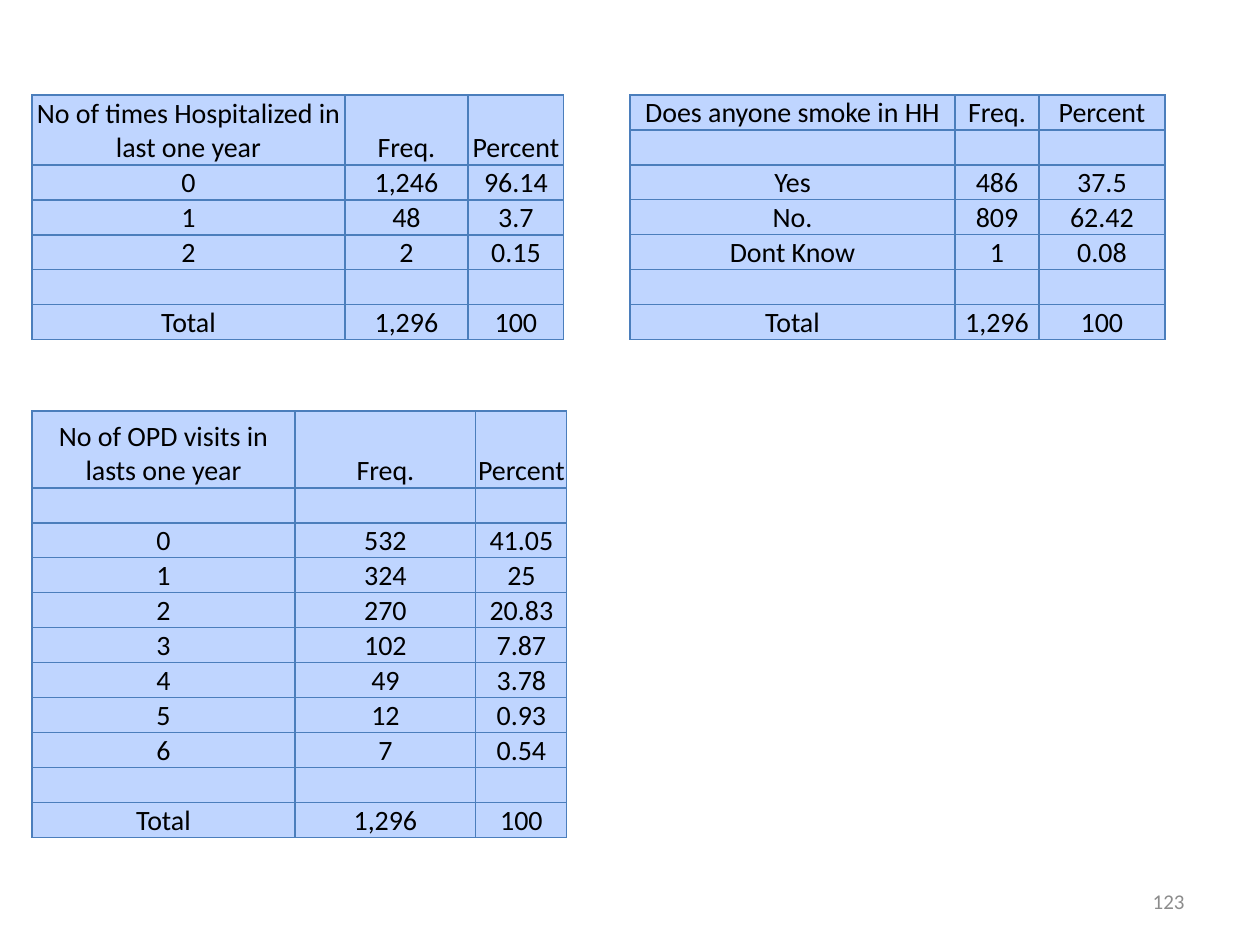
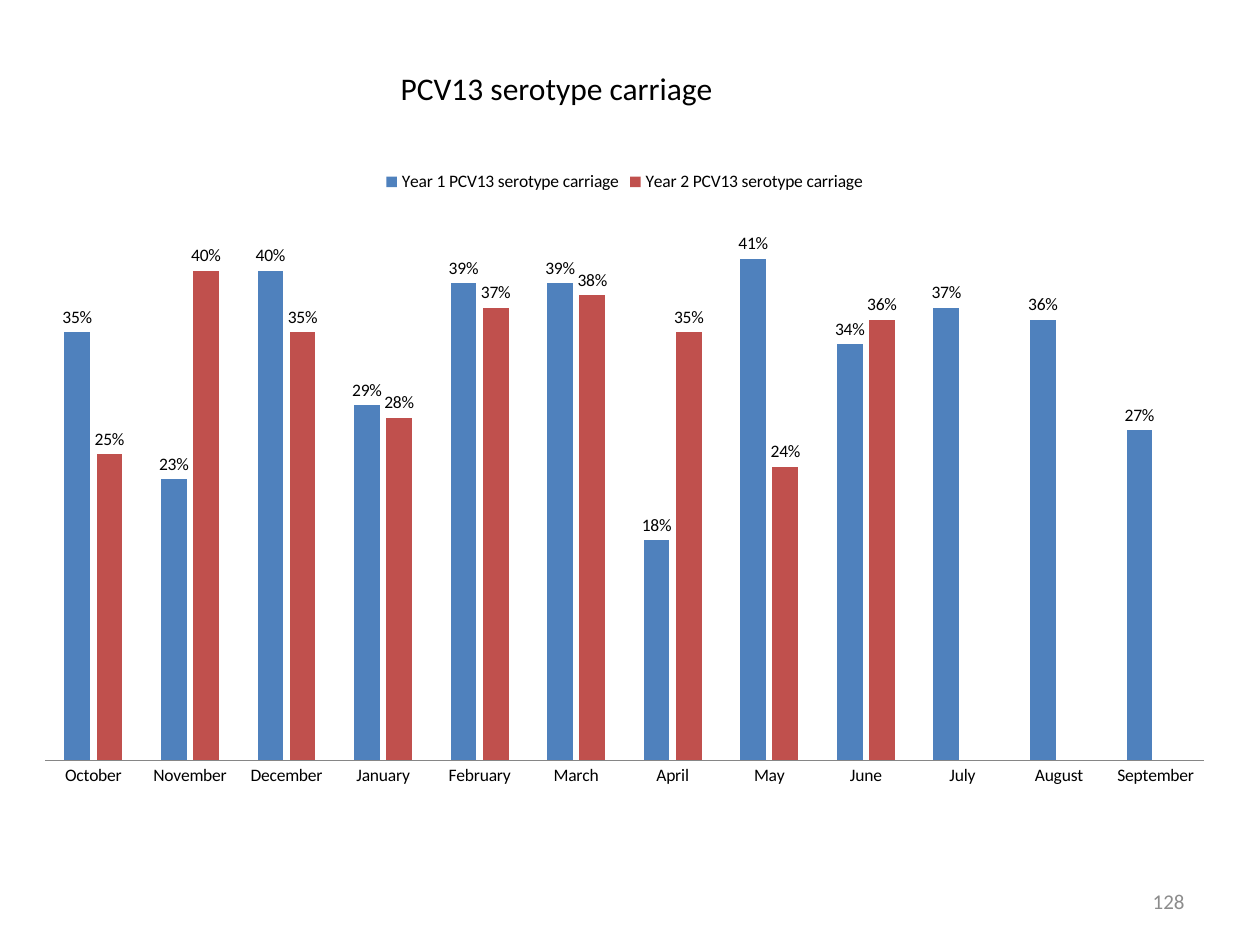
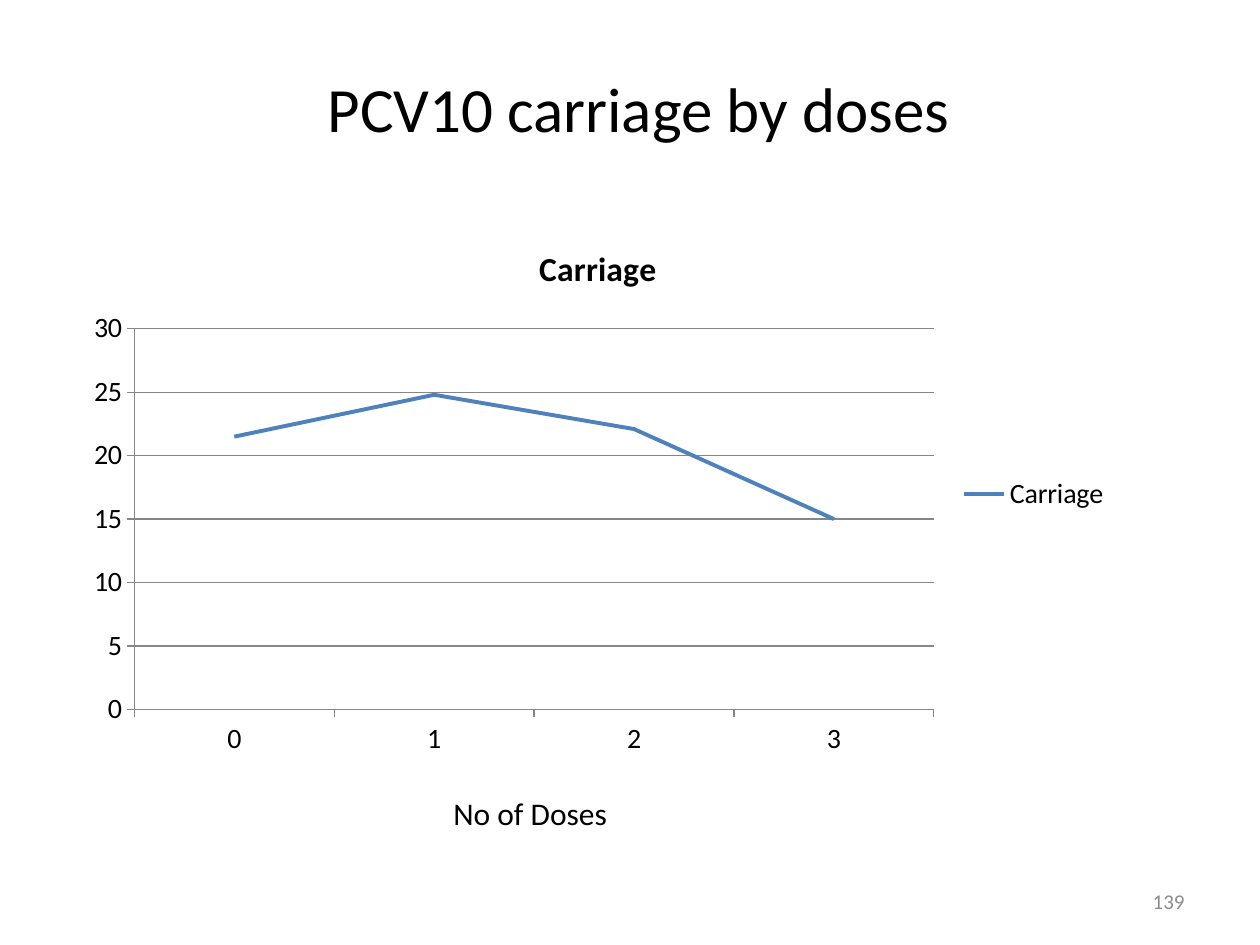
import pptx
import pptx.chart.data
import pptx.dml.color
import pptx.enum.chart
import pptx.enum.text
import pptx.oxml
import pptx.oxml.ns
import pptx.util
from lxml import etree

SCALE = 914400 / 126
FONT = "Calibri"
BLACK, GREY, AXIS = "000000", "8C8C8C", "868686"
BLUE, RED, PALE, EDGE = "4F81BD", "C0504D", "BFD5FF", "4B7EBC"
ALIGN = pptx.enum.text.PP_ALIGN
ANCHOR = pptx.enum.text.MSO_ANCHOR
KIND = pptx.enum.chart.XL_CHART_TYPE
SIDE = pptx.enum.chart.XL_LEGEND_POSITION
TICK = pptx.enum.chart.XL_TICK_MARK
MONTHS = ["October", "November", "December", "January", "February", "March",
          "April", "May", "June", "July", "August", "September"]


def px(count):
    """Turn px into EMU."""
    return pptx.util.Emu(round(count * SCALE))


def tint(code):
    """Turn a hex string into a colour."""
    return pptx.dml.color.RGBColor.from_string(code)


def style(font, size, code=BLACK, bold=False):
    """Set the look of a font."""
    font.name, font.size, font.bold = FONT, pptx.util.Pt(size), bold
    font.color.rgb = tint(code)


class Deck:
    """Holds the shared style and the current slide."""

    def __init__(self):
        """Start an empty deck."""
        self.prs = pptx.Presentation()
        self.prs.slide_width, self.prs.slide_height = px(1260), px(945)

    def page(self, number, titled=True):
        """Add a slide with its number."""
        layout = self.prs.slide_layouts[5 if titled else 6]
        self.slide = self.prs.slides.add_slide(layout)
        box = self.text(number, (903, 876, 294, 50), 12, GREY, ALIGN.RIGHT)
        box.text_frame.vertical_anchor = ANCHOR.MIDDLE

    def fill(self, shape, words, size, code, align):
        """Put one styled line into a shape."""
        frame = shape.text_frame
        frame.text = words
        frame.word_wrap = False
        frame.vertical_anchor = ANCHOR.TOP
        frame.paragraphs[0].alignment = align
        style(frame.paragraphs[0].runs[0].font, size, code)

    def text(self, words, area, size, code=BLACK, align=ALIGN.LEFT):
        """Add a text box."""
        box = self.slide.shapes.add_textbox(*map(px, area))
        self.fill(box, words, size, code, align)
        return box

    def title(self, words, area, size):
        """Place and format the title."""
        head = self.slide.shapes.title
        head.left, head.top, head.width, head.height = map(px, area)
        self.fill(head, words, size, BLACK, ALIGN.LEFT)

    def cell(self, cell, words):
        """Format one table cell with its borders."""
        cell.margin_left = cell.margin_right = cell.margin_top = px(1)
        cell.margin_bottom = 0
        cell.vertical_anchor = ANCHOR.BOTTOM
        cell.text = words
        para = cell.text_frame.paragraphs[0]
        para.alignment = ALIGN.CENTER
        for run in para.runs:
            style(run.font, 16)
        if not words:
            etree.SubElement(para._p, pptx.oxml.ns.qn("a:endParaRPr"), sz="1600")
        props = cell._tc.get_or_add_tcPr()
        for side in ("lnL", "lnR", "lnT", "lnB"):
            props.append(pptx.oxml.parse_xml(
                f'<a:{side} {pptx.oxml.ns.nsdecls("a")} w="9525"><a:solidFill>'
                f'<a:srgbClr val="{EDGE}"/></a:solidFill></a:{side}>'))
        cell.fill.solid()
        cell.fill.fore_color.rgb = tint(PALE)

    def table(self, left, top, widths, head, rows):
        """Add a table of counts and shares."""
        rows = [(rows[0], "Freq.", "Percent"), *rows[1:]]
        high = head + 35 * (len(rows) - 1)
        area = map(px, (left, top, sum(widths), high))
        grid = self.slide.shapes.add_table(len(rows), len(widths), *area).table
        for col, width in zip(grid.columns, widths):
            col.width = px(width)
        for i, row in enumerate(rows):
            grid.rows[i].height = px(35 if i else head)
            for j, words in enumerate(row):
                self.cell(grid.cell(i, j), words)

    def chart(self, kind, area, cats, series, size, side, top, form="General"):
        """Add a chart with the shared axis and legend style."""
        data = pptx.chart.data.CategoryChartData(number_format=form)
        data.categories = cats
        for name, vals in series:
            data.add_series(name, vals)
        chart = self.slide.shapes.add_chart(kind, *map(px, area), data).chart
        style(chart.font, size)
        chart.has_title = False
        chart.has_legend = True
        chart.legend.position = side
        chart.legend.include_in_layout = False
        chart.plots[0].vary_by_categories = False
        chart.value_axis.minimum_scale, chart.value_axis.maximum_scale = 0, top
        for axis in (chart.category_axis, chart.value_axis):
            axis.format.line.color.rgb = tint(AXIS)
        return chart

    def bars(self, area, cats, series):
        """Add a column chart with value labels."""
        chart = self.chart(KIND.COLUMN_CLUSTERED, area, cats, series, 10,
                           SIDE.TOP, 0.45, "0%")
        chart.category_axis.major_tick_mark = TICK.NONE
        chart.value_axis.has_major_gridlines = False
        chart.value_axis.visible = False
        plot = chart.plots[0]
        plot.gap_width, plot.overlap = 150, -25
        for item, code in zip(plot.series, (BLUE, RED)):
            item.format.fill.solid()
            item.format.fill.fore_color.rgb = tint(code)
            tags = item.data_labels
            tags.show_value = True
            tags.number_format, tags.number_format_is_linked = "0%", False
            tags.position = pptx.enum.chart.XL_LABEL_POSITION.OUTSIDE_END
            style(tags.font, 10)

    def line(self, area, cats, name, vals):
        """Add a line chart with a title."""
        chart = self.chart(KIND.LINE, area, cats, [(name, vals)], 16,
                           SIDE.RIGHT, 30)
        chart.has_title = True
        chart.chart_title.text_frame.text = name
        para = chart.chart_title.text_frame.paragraphs[0]
        style(para.runs[0].font, 19.2, bold=True)
        for axis in (chart.category_axis, chart.value_axis):
            axis.major_tick_mark = TICK.OUTSIDE
        chart.value_axis.major_unit = 5
        chart.value_axis.major_gridlines.format.line.color.rgb = tint(AXIS)
        item = chart.plots[0].series[0]
        item.smooth = False
        item.marker.style = pptx.enum.chart.XL_MARKER_STYLE.NONE
        item.format.line.width = pptx.util.Pt(2.25)
        item.format.line.color.rgb = tint(BLUE)


def main():
    """Build the three slides."""
    deck = Deck()
    gap, total = ("", "", ""), ("Total", "1,296", "100")

    deck.page("123", titled=False)
    deck.table(32, 95, (313, 123, 96), 70, [
        "No of times Hospitalized in last one year", ("0", "1,246", "96.14"),
        ("1", "48", "3.7"), ("2", "2", "0.15"), gap, total])
    deck.table(32, 411, (263, 181, 91), 77, [
        "No of OPD visits in lasts one year", gap, ("0", "532", "41.05"),
        ("1", "324", "25"), ("2", "270", "20.83"), ("3", "102", "7.87"),
        ("4", "49", "3.78"), ("5", "12", "0.93"), ("6", "7", "0.54"),
        gap, total])
    deck.table(630, 95, (325, 84, 126), 35, [
        "Does anyone smoke in HH", gap, ("Yes", "486", "37.5"),
        ("No.", "809", "62.42"), ("Dont Know", "1", "0.08"), gap, total])

    deck.page("128")
    deck.bars((21, 158, 1207, 640), MONTHS, [
        ("Year 1 PCV13 serotype carriage",
         (0.35, 0.23, 0.4, 0.29, 0.39, 0.39, 0.18, 0.41, 0.34, 0.37, 0.36, 0.27)),
        ("Year 2 PCV13 serotype carriage",
         (0.25, 0.4, 0.35, 0.28, 0.37, 0.38, 0.35, 0.24, 0.36, None, None, None))])
    deck.title("PCV13 serotype carriage", (388, 63, 340, 50), 18)

    deck.page("139")
    deck.title("PCV10 carriage by doses", (315, 63, 673, 89), 36)
    deck.line((73, 221, 1050, 546), ["0", "1", "2", "3"], "Carriage",
              (21.5, 24.8, 22.1, 15))
    deck.text("No of Doses", (441, 788, 188, 50), 18)

    deck.prs.save("out.pptx")


if __name__ == "__main__":
    main()
